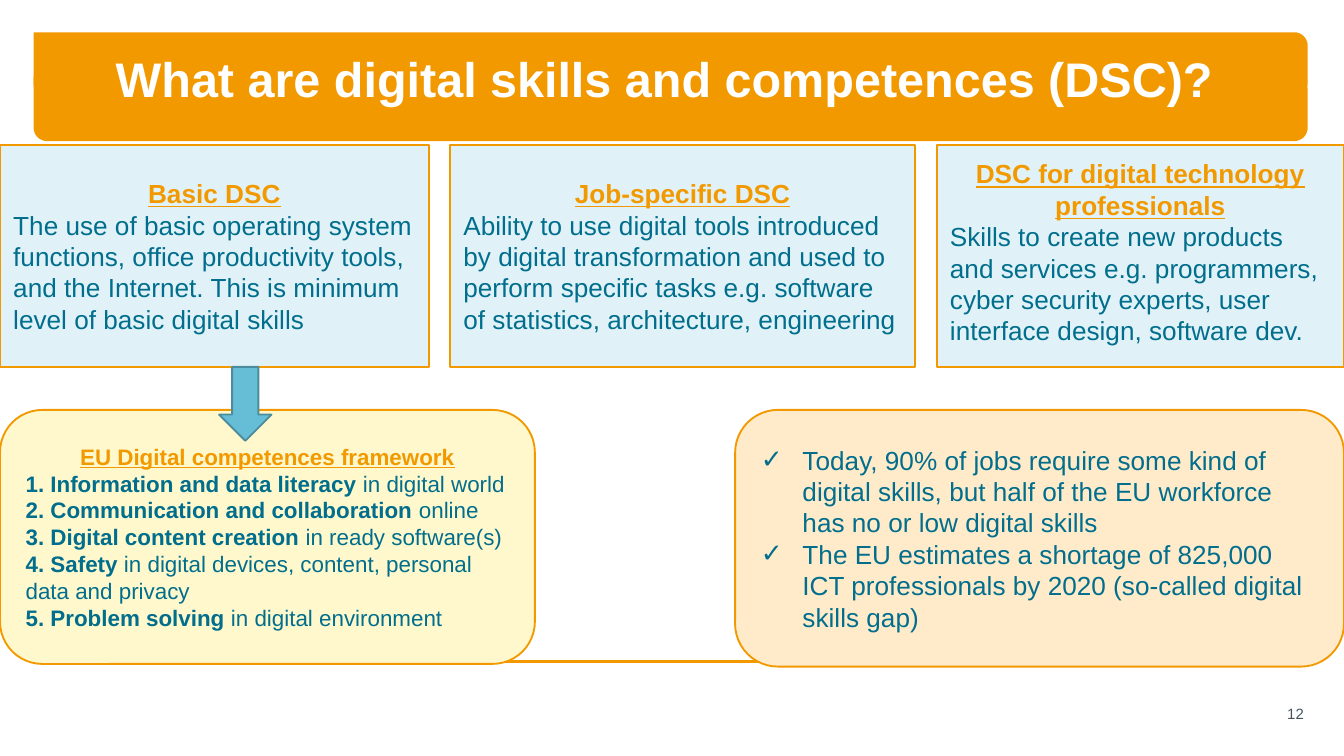
from dataclasses import dataclass
from math import cos, pi, sin

from lxml.etree import SubElement
from pptx import Presentation
from pptx.dml.color import RGBColor
from pptx.enum.shapes import MSO_CONNECTOR, MSO_SHAPE
from pptx.enum.text import MSO_ANCHOR, PP_ALIGN
from pptx.oxml.ns import qn
from pptx.util import Inches, Pt


@dataclass(frozen=True)
class Theme:
    """Colours, font and type sizes of the slide."""
    orange: str = "F39900"
    teal: str = "006E8C"
    white: str = "FFFFFF"
    grey: str = "455560"
    pale_blue: str = "E0F2F7"
    pale_yellow: str = "FFF8CC"
    pale_orange: str = "FFEBCA"
    arrow: str = "66BED6"
    arrow_edge: str = "4B8D9E"
    font: str = "Arial"
    title: int = 26
    body: int = 14
    small: int = 12
    number: int = 8


T = Theme()

SKILLS = [
    (3.19, "Basic DSC",
     "The use of basic operating system functions, office productivity tools, "
     "and the Internet. This is minimum level of basic digital skills"),
    (3.46, "Job-specific DSC",
     "Ability to use digital tools introduced by digital transformation and used to "
     "perform specific tasks e.g. software of statistics, architecture, engineering"),
    (3.03, "DSC for digital technology professionals",
     "Skills to create new products and services e.g. programmers, cyber security "
     "experts, user interface design, software dev."),
]
FRAMEWORK = [
    ("1. Information and data literacy ", "in digital world"),
    ("2. Communication and collaboration ", "online"),
    ("3. Digital content creation ", "in ready software(s)"),
    ("4. Safety ", "in digital devices, content, personal data and privacy"),
    ("5. Problem solving", " in digital environment"),
]
FACTS = [
    "Today, 90% of jobs require some kind of digital skills, but half of the EU workforce "
    "has no or low digital skills",
    "The EU estimates a shortage of 825,000 ICT professionals by 2020 "
    "(so-called digital skills gap)",
]


def rgb(color):
    """Turn a hex string into a colour."""
    return RGBColor.from_string(color)


def add_run(p, text, size, color, **formats):
    """Append a run with its font settings."""
    r = p.add_run()
    r.text = text
    r.font.color.rgb = rgb(color)
    for name, value in dict(formats, name=T.font, size=Pt(size)).items():
        setattr(r.font, name, value)


def add_paragraph(tf, align=PP_ALIGN.LEFT):
    """Return the first unused paragraph of a frame, aligned."""
    p = tf.add_paragraph() if tf.paragraphs[0].runs else tf.paragraphs[0]
    p.alignment = align
    return p


def add_heading(tf, text, size):
    """Add a centred, underlined orange heading."""
    add_run(add_paragraph(tf, PP_ALIGN.CENTER), text, size, T.orange, bold=True, underline=True)


def paint(s, fill, line=None):
    """Give a shape a flat fill and an optional thin outline."""
    s.shadow.inherit = False
    s.fill.solid()
    s.fill.fore_color.rgb = rgb(fill)
    if line:
        s.line.color.rgb = rgb(line)
        s.line.width = Pt(1)
    else:
        s.line.fill.background()


def add_panel(slide, kind, box, fill, line=T.orange):
    """Add a filled preset shape and return its text frame."""
    s = slide.shapes.add_shape(kind, *map(Inches, box))
    paint(s, fill, line)
    tf = s.text_frame
    tf.word_wrap = True
    tf.vertical_anchor = MSO_ANCHOR.MIDDLE
    return tf


def add_label(slide, box, text, size, color, align, anchor, **formats):
    """Add a one-line text box."""
    tf = slide.shapes.add_textbox(*map(Inches, box)).text_frame
    tf.word_wrap = True
    tf.vertical_anchor = anchor
    p = add_paragraph(tf, align)
    add_run(p, text, size, color, **formats)
    return p


def add_band(slide, x, y, w, h, radius=0.1, steps=8):
    """Draw a band with a square top-left corner and three round ones."""
    centres = [(x + w - radius, y + radius), (x + w - radius, y + h - radius),
               (x + radius, y + h - radius)]
    points = []
    for i, (cx, cy) in enumerate(centres):
        for step in range(steps + 1):
            angle = (i - 1 + step / steps) * pi / 2
            points.append((Inches(cx + radius * cos(angle)), Inches(cy + radius * sin(angle))))
    fb = slide.shapes.build_freeform(Inches(x), Inches(y))
    fb.add_line_segments(points, close=True)
    paint(fb.convert_to_shape(), T.orange)


def add_header(slide, x, y, w, h):
    """Build the title banner from two overlapping bands."""
    band = 0.48
    for top in (y + h - band, y):
        add_band(slide, x, top, w, band)
    p = add_label(slide, (0, y - 0.1, 10, 0.71), "What are digital skills and competences (DSC)? ",
                  T.title, T.white, PP_ALIGN.CENTER, MSO_ANCHOR.BOTTOM, bold=True)
    p.line_spacing = 0.9


def add_footer(slide, x, y, w):
    """Draw the rule and the slide number below it."""
    c = slide.shapes.add_connector(MSO_CONNECTOR.STRAIGHT, *map(Inches, (x, y, x + w, y)))
    c.line.color.rgb = rgb(T.orange)
    c.line.width = Pt(1.75)
    SubElement(c._element.spPr, qn("a:effectLst"))
    add_label(slide, (x + w - 0.36, y + 0.24, 0.43, 0.3), "12", T.number, T.grey,
              PP_ALIGN.RIGHT, MSO_ANCHOR.MIDDLE)


def add_skills(slide, x, y, w, h):
    """Place the skill cards side by side with equal gaps."""
    gap = (w - sum(width for width, _, _ in SKILLS)) / (len(SKILLS) - 1)
    for width, heading, text in SKILLS:
        tf = add_panel(slide, MSO_SHAPE.RECTANGLE, (x, y, width, h), T.pale_blue)
        add_heading(tf, heading, T.body)
        add_run(add_paragraph(tf), text, T.body, T.teal)
        x += width + gap
    tf.margin_bottom = Inches(0.11)


def add_framework(slide, x, y, w, h):
    """Place the framework list and the arrow leading to it."""
    tf = add_panel(slide, MSO_SHAPE.ROUNDED_RECTANGLE, (x, y, w, h), T.pale_yellow)
    add_heading(tf, "EU Digital competences framework", T.small)
    for area, detail in FRAMEWORK:
        p = add_paragraph(tf)
        add_run(p, area, T.small, T.teal, bold=True)
        add_run(p, detail, T.small, T.teal)
    add_panel(slide, MSO_SHAPE.DOWN_ARROW, (x + 1.63, y - 0.32, 0.39, 0.55), T.arrow, T.arrow_edge)


def add_facts(slide, x, y, w, h):
    """Place the check-marked facts."""
    tf = add_panel(slide, MSO_SHAPE.ROUNDED_RECTANGLE, (x, y, w, h), T.pale_orange)
    for fact in FACTS:
        p = add_paragraph(tf)
        pPr = p._p.get_or_add_pPr()
        pPr.set("marL", str(Inches(0.31)))
        pPr.set("indent", str(-Inches(0.31)))
        SubElement(pPr, qn("a:buFont"), typeface=T.font)
        SubElement(pPr, qn("a:buChar"), char="✓")
        add_run(p, fact, T.body, T.teal)


def main():
    """Build and save the slide."""
    prs = Presentation()
    prs.slide_width = Inches(10)
    prs.slide_height = Inches(10) * 9 // 16
    slide = prs.slides.add_slide(prs.slide_layouts[6])
    add_header(slide, 0.25, 0.24, 9.48, 0.81)
    add_footer(slide, 0.25, 4.92, 9.48)
    add_skills(slide, 0, 1.08, 10, 1.65)
    add_framework(slide, 0, 3.05, 3.98, 1.89)
    add_facts(slide, 5.47, 3.05, 4.53, 1.91)
    prs.save("out.pptx")


if __name__ == "__main__":
    main()
